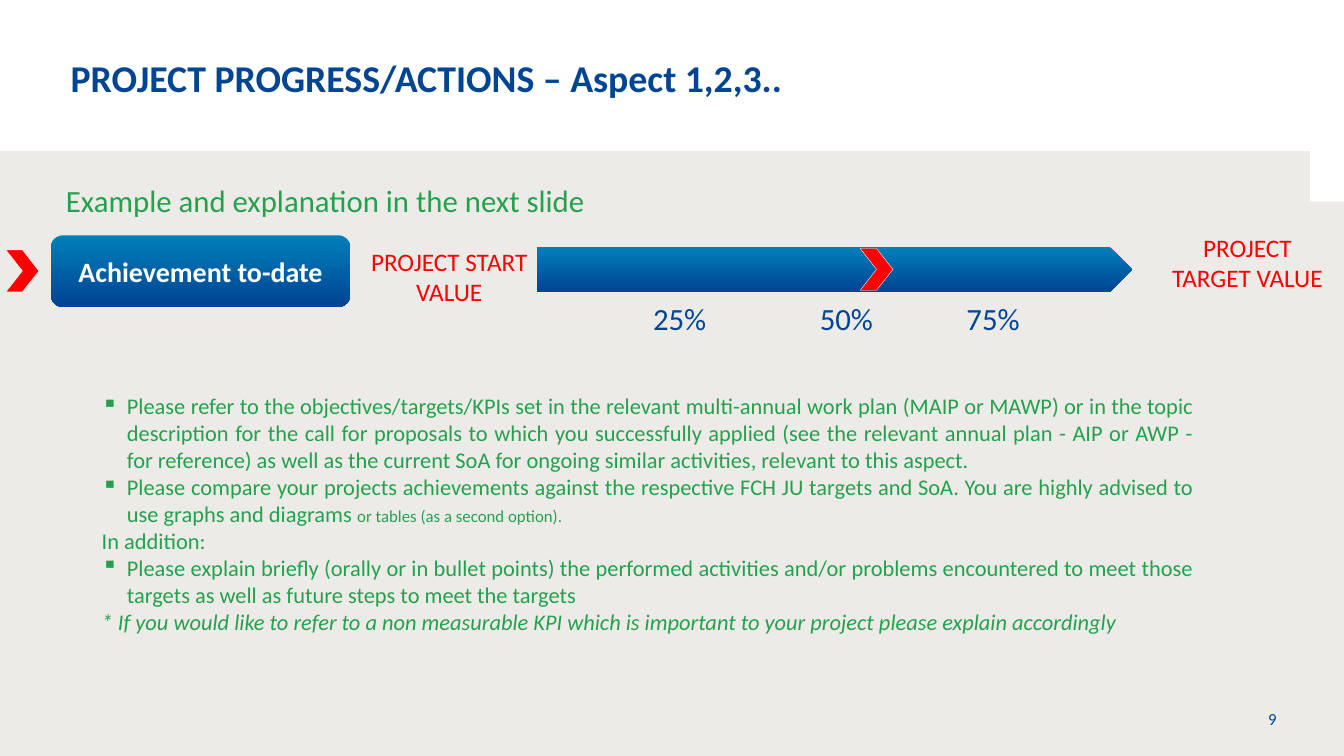
"""Build the project progress slide."""
from dataclasses import dataclass
from math import cos, pi, sin
from typing import Any

from lxml import etree
from pptx import Presentation
from pptx import util as u
from pptx.dml.color import RGBColor
from pptx.enum import shapes, text
from pptx.oxml.ns import qn

WIDE, HIGH = 26.67, 15
NAVY, SKY, GREEN, RED, WHITE, GREY = "004494", "007FBA", "25A14D", "FF0000", "FFFFFF", "ECEBE8"
KIND, ALIGN, ANCHOR = shapes.MSO_SHAPE, text.PP_ALIGN, text.MSO_ANCHOR
NOTE, SMALL = 32, 24


@dataclass
class Box:
    """Place in percent of the slide's width and height."""
    x: float
    y: float
    w: float
    h: float


@dataclass
class Label:
    """One line of wording with its place and look."""
    box: Box
    words: str
    size: int
    tint: str
    align: Any = ALIGN.JUSTIFY
    wrap: bool = False
    bold: bool = False
    anchor: Any = ANCHOR.TOP


@dataclass
class Note:
    """One paragraph of guidance as (words, size) runs."""
    runs: list[tuple[str, int]]
    bullet: bool = False
    italic: bool = False


def rgb(code: str) -> RGBColor:
    """Turn a hex string into a colour."""
    return RGBColor.from_string(code)


def place(box: Box) -> list[int]:
    """Turn percent shares into slide lengths."""
    return [u.Inches(part * full / 100) for part, full in
            zip((box.x, box.y, box.w, box.h), (WIDE, HIGH) * 2)]


def style(target: Any, **values: Any) -> None:
    """Set each given attribute on the target."""
    for name, value in values.items():
        setattr(target, name, value)


def paint(shape: Any, tint: str, edge: str = "") -> None:
    """Give a shape a flat fill and an optional thin edge."""
    shape.shadow.inherit = False
    shape.fill.solid()
    shape.fill.fore_color.rgb = rgb(tint)
    if edge:
        shape.line.color.rgb = rgb(edge)
        shape.line.width = u.Pt(0.5)
    else:
        shape.line.fill.background()


def shade(shape: Any) -> None:
    """Give a shape the downward blue gradient."""
    paint(shape, NAVY)
    shape.fill.gradient()
    shape.fill.gradient_angle = 270
    for stop, tint, spot in zip(shape.fill.gradient_stops, (SKY, NAVY), (0, 0.99)):
        stop.color.rgb = rgb(tint)
        stop.position = spot


def write(para: Any, words: str, size: int, tint: str, **looks: Any) -> None:
    """Add a formatted run to a paragraph."""
    run = para.add_run()
    run.text = words
    style(run.font, name="Calibri", size=u.Pt(size), **looks)
    run.font.color.rgb = rgb(tint)


def fill_text(shape: Any, item: Label) -> None:
    """Put a label's wording into a shape."""
    frame = shape.text_frame
    style(frame, word_wrap=item.wrap, vertical_anchor=item.anchor)
    para = frame.paragraphs[0]
    para.alignment = item.align
    write(para, item.words, item.size, item.tint, bold=item.bold)


def label(host: Any, item: Label) -> Any:
    """Add a text box for a label."""
    shape = host.add_textbox(*place(item.box))
    fill_text(shape, item)
    return shape


def header(host: Any) -> None:
    """Draw the white header with its two rounded lower corners."""
    radius, base, steps = 0.87, 3.43, 16
    turns = [pi / 2 * i / steps for i in range(steps + 1)]
    right = [(WIDE - radius + radius * cos(a), base + radius - radius * sin(a)) for a in turns]
    left = [(radius - radius * sin(a), base - radius + radius * cos(a)) for a in turns]
    pen = host.build_freeform(0, 0, scale=u.Inches(1))
    pen.add_line_segments([(WIDE, 0), *right, *left])
    paint(pen.convert_to_shape(), WHITE)


def guide(host: Any, box: Box, notes: list[Note]) -> None:
    """Write the guidance paragraphs in one text box."""
    frame = host.add_textbox(*place(box)).text_frame
    frame.word_wrap = True
    for i, note in enumerate(notes):
        para = frame.add_paragraph() if i else frame.paragraphs[0]
        para.alignment = ALIGN.JUSTIFY
        if note.bullet:
            props = para._p.get_or_add_pPr()
            props.set("marL", str(u.Inches(0.5)))
            props.set("indent", str(u.Inches(-0.5)))
            etree.SubElement(props, qn("a:buChar"), char="▪")
        for words, size in note.runs:
            write(para, words, size, GREEN, italic=note.italic)


def main() -> None:
    """Build and save the slide."""
    deck = Presentation()
    style(deck, slide_width=u.Inches(WIDE), slide_height=u.Inches(HIGH))
    host = deck.slides.add_slide(deck.slide_layouts[6]).shapes

    paint(host.add_shape(KIND.RECTANGLE, *place(Box(0, 0, 100, 100))), GREY)
    header(host)
    label(host, Label(Box(91.34, 92.13, 4.01, 5.87), "9", 24, NAVY, ALIGN.RIGHT,
                      anchor=ANCHOR.MIDDLE, wrap=True))
    title = label(host, Label(Box(5.25, 7.2, 81.67, 6.07),
                              "PROJECT PROGRESS/ACTIONS – Aspect 1,2,3..",
                              54, NAVY, ALIGN.LEFT, wrap=True, bold=True))
    style(title.text_frame, margin_left=0, margin_right=0, margin_top=0, margin_bottom=0)
    label(host, Label(Box(4.54, 23.73, 39.78, 5.6),
                      "Example and explanation in the next slide", 44, GREEN))

    badge = Label(Box(3.79, 31.13, 22.27, 9.47), "Achievement to-date", 40, WHITE,
                  ALIGN.CENTER, True, True, ANCHOR.MIDDLE)
    shape = host.add_shape(KIND.ROUNDED_RECTANGLE, *place(badge.box))
    shade(shape)
    fill_text(shape, badge)

    scale = host.add_group_shape().shapes
    arrow = scale.add_shape(KIND.RIGHT_ARROW, *place(Box(39.97, 32.67, 44.28, 5.93)))
    arrow.adjustments[0], arrow.adjustments[1] = 1, 0.5
    shade(arrow)
    for mark, x in (("25%", 48.22), ("50%", 60.63), ("75%", 71.54)):
        label(scale, Label(Box(x, 39.27, 4.76, 5.6), mark, 44, NAVY))

    for end, x, y in (("TARGET", 86.31, 30.4), ("START", 26.92, 32.27)):
        label(host, Label(Box(x, y, 13.01, 8.73), f"PROJECT {end} VALUE", 36, RED,
                          ALIGN.CENTER, True))
    for x, y in ((64, 32.87), (0.45, 33.07)):
        paint(host.add_shape(KIND.CHEVRON, *place(Box(x, y, 2.44, 5.53))), RED, WHITE)

    guide(host, Box(7.2, 51.6, 82.04, 33), [
        Note([("Please refer to the objectives/targets/KPIs set in the relevant multi-annual "
               "work plan (MAIP or MAWP) or in the topic description for the call for proposals "
               "to which you successfully applied (see the relevant annual plan - AIP or AWP - "
               "for reference) as well as the current SoA for ongoing similar activities, "
               "relevant to this aspect.", NOTE)], bullet=True),
        Note([("Please compare your projects achievements against the respective FCH JU targets "
               "and SoA. You are highly advised to use graphs and diagrams ", NOTE),
              ("or tables (as a second option).", SMALL)], bullet=True),
        Note([("In addition:", NOTE)]),
        Note([("Please explain briefly (orally or in bullet points) the performed activities "
               "and/or problems encountered to meet those targets as well as future steps to "
               "meet the targets", NOTE)], bullet=True),
        Note([("* If you would like to refer to a non measurable KPI which is important to your "
               "project please explain accordingly", NOTE)], italic=True),
    ])
    deck.save("out.pptx")


if __name__ == "__main__":
    main()
